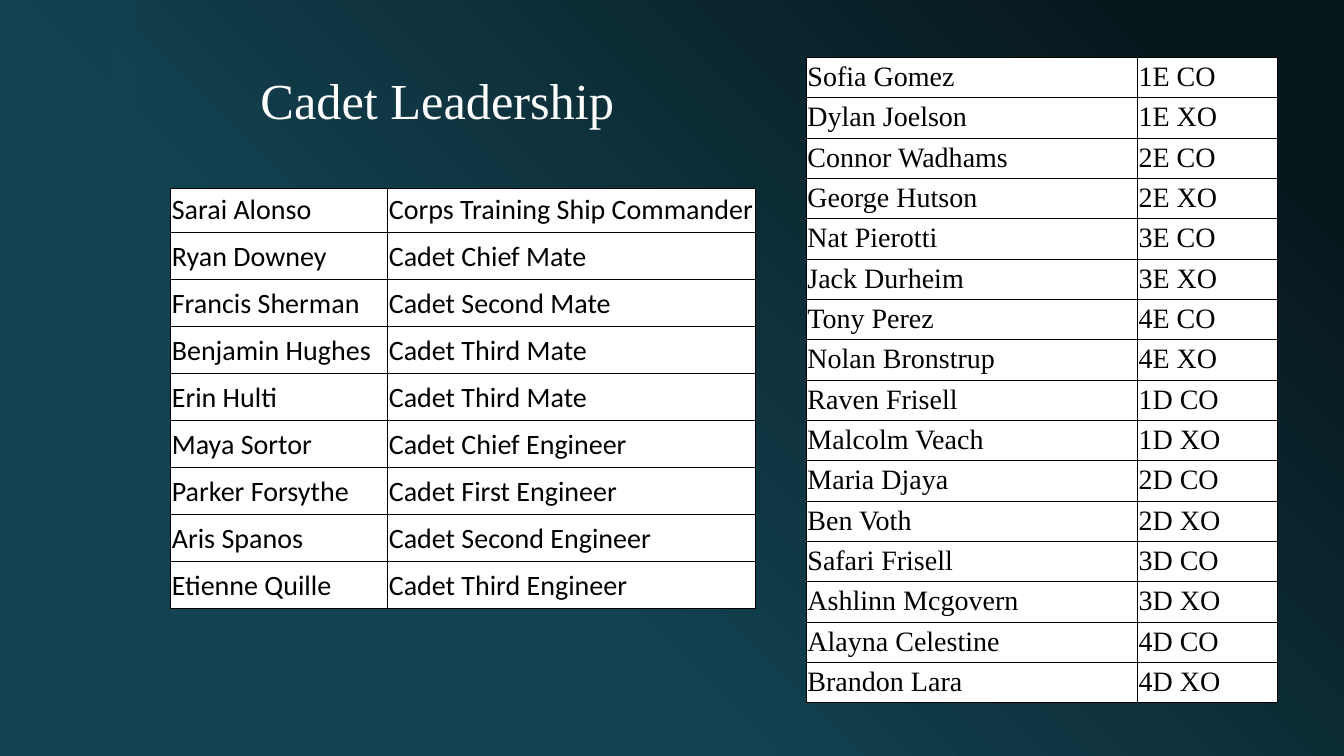
"""Build the Cadet Leadership slide."""
from lxml import etree
from pptx import Presentation
from pptx.dml.color import RGBColor
from pptx.enum.shapes import MSO_SHAPE
from pptx.enum.text import MSO_ANCHOR, PP_ALIGN
from pptx.oxml.ns import qn
from pptx.util import Pt

RECT = MSO_SHAPE.RECTANGLE
TOP, BOTTOM = MSO_ANCHOR.TOP, MSO_ANCHOR.BOTTOM
CENTER = PP_ALIGN.CENTER
WHITE = RGBColor(0xFF, 0xFF, 0xFF)
BLACK = RGBColor(0, 0, 0)
TEAL = RGBColor(0x13, 0x42, 0x51)
NIGHT = RGBColor(0x06, 0x17, 0x1C)
SERIF, SANS = "Times New Roman", "Calibri"

CELL = {"margin_left": Pt(0.75), "margin_right": Pt(0.75),
        "margin_top": Pt(0.75), "margin_bottom": Pt(3.6),
        "vertical_anchor": BOTTOM}

OFFICERS = [
    ("Sarai Alonso", "Corps Training Ship Commander"),
    ("Ryan Downey", "Cadet Chief Mate"),
    ("Francis Sherman", "Cadet Second Mate"),
    ("Benjamin Hughes", "Cadet Third Mate"),
    ("Erin Hulti", "Cadet Third Mate"),
    ("Maya Sortor", "Cadet Chief Engineer"),
    ("Parker Forsythe", "Cadet First Engineer"),
    ("Aris Spanos", "Cadet Second Engineer"),
    ("Etienne Quille", "Cadet Third Engineer"),
]
COMPANY_LEADERS = [
    ("Sofia Gomez", "1E CO"),
    ("Dylan Joelson", "1E XO"),
    ("Connor Wadhams", "2E CO"),
    ("George Hutson", "2E XO"),
    ("Nat Pierotti", "3E CO"),
    ("Jack Durheim", "3E XO"),
    ("Tony Perez", "4E CO"),
    ("Nolan Bronstrup", "4E XO"),
    ("Raven Frisell", "1D CO"),
    ("Malcolm Veach", "1D XO"),
    ("Maria Djaya", "2D CO"),
    ("Ben Voth", "2D XO"),
    ("Safari Frisell", "3D CO"),
    ("Ashlinn Mcgovern", "3D XO"),
    ("Alayna Celestine", "4D CO"),
    ("Brandon Lara", "4D XO"),
]


def apply(target, values):
    """Set each named attribute on the target."""
    for name, value in values.items():
        setattr(target, name, value)


def style_font(font, name, size, color):
    """Set a font's face, size and colour."""
    apply(font, {"name": name, "size": Pt(size)})
    font.color.rgb = color


def set_background(s):
    """Fill the slide with a diagonal gradient from the top right."""
    fill = s.background.fill
    fill.gradient()
    fill.gradient_angle = 225
    for stop, color, position in zip(fill.gradient_stops, (NIGHT, TEAL), (0.1, 0.65)):
        stop.color.rgb = color
        stop.position = position


def add_band(s, left, width, height):
    """Add the translucent vertical band."""
    sp = s.shapes.add_shape(RECT, Pt(left), 0, Pt(width), height)
    sp.shadow.inherit = False
    sp.fill.solid()
    sp.fill.fore_color.rgb = TEAL
    sp.line.fill.background()
    color = sp.fill._xPr.find(".//" + qn("a:srgbClr"))
    etree.SubElement(color, qn("a:alpha"), val="60000")


def set_title(s, text):
    """Place and format the title placeholder."""
    sp = s.shapes.title
    apply(sp, {"left": Pt(101), "top": Pt(24.5), "width": Pt(423), "height": Pt(238)})
    tf = sp.text_frame
    apply(tf, {"text": text, "word_wrap": True, "vertical_anchor": TOP})
    p = tf.paragraphs[0]
    apply(p, {"alignment": CENTER, "line_spacing": 1.5})
    style_font(p.font, SERIF, 36, WHITE)


def add_borders(cell):
    """Draw a thin black line on all four sides of a cell."""
    tc_pr = cell._tc.get_or_add_tcPr()
    for side in ("a:lnL", "a:lnR", "a:lnT", "a:lnB"):
        line = etree.SubElement(tc_pr, qn(side), w=str(Pt(0.5)))
        fill = etree.SubElement(line, qn("a:solidFill"))
        etree.SubElement(fill, qn("a:srgbClr"), val=str(BLACK))


def fill_cell(cell, text, font_name):
    """Write and format one table cell."""
    apply(cell, {"text": text, **CELL})
    add_borders(cell)
    cell.fill.solid()
    cell.fill.fore_color.rgb = WHITE
    r = cell.text_frame.paragraphs[0].runs[0]
    style_font(r.font, font_name, 20, BLACK)


def add_roster(s, people, left, top, widths, heights, font_name):
    """Add a table of names and posts."""
    frame = s.shapes.add_table(len(people), len(widths), Pt(left), Pt(top),
                               Pt(sum(widths)), Pt(sum(heights)))
    table = frame.table
    apply(table, {"first_row": False, "horz_banding": False})
    for column, width in zip(table.columns, widths):
        column.width = Pt(width)
    for row, height, person in zip(table.rows, heights, people):
        row.height = Pt(height)
        for cell, text in zip(row.cells, person):
            fill_cell(cell, text, font_name)


def main():
    """Build and save the presentation."""
    prs = Presentation()
    apply(prs, {"slide_width": Pt(960), "slide_height": Pt(540)})
    s = prs.slides.add_slide(prs.slide_layouts[5])
    set_background(s)
    add_band(s, 79.2, 18, prs.slide_height)
    set_title(s, "Cadet Leadership")
    add_roster(s, OFFICERS, 122, 134.5, (155, 262.5), [31.4] + [33.6] * 8, SANS)
    add_roster(s, COMPANY_LEADERS, 576, 41, (236.5, 100), [28.8] * 16, SERIF)
    prs.save("out.pptx")


if __name__ == "__main__":
    main()
